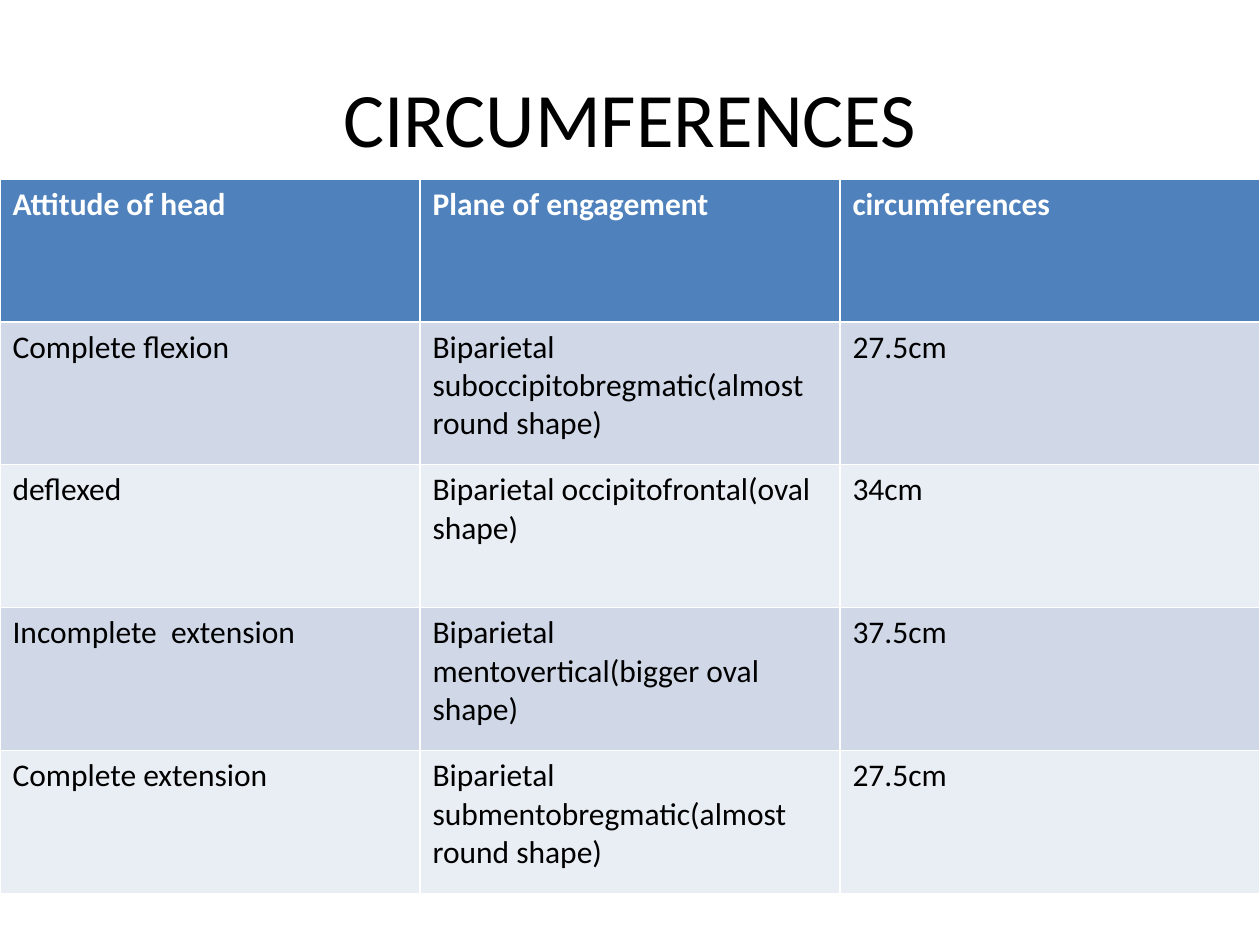
from pptx import Presentation
from pptx.dml.color import RGBColor
from pptx.enum import text
from pptx.util import Inches, Pt

COLORS = {
    "white": "FFFFFF",
    "black": "000000",
    "header": "4F81BD",
    "odd": "D0D8E8",
    "even": "E9EDF4",
}


def write(tf, content, size=18, color="black", bold=False, align=text.PP_ALIGN.LEFT):
    p = tf.paragraphs[0]
    p.alignment = align
    r = p.add_run()
    r.text = content
    r.font.name = "Calibri"
    r.font.size = Pt(size)
    r.font.bold = bold
    r.font.color.rgb = RGBColor.from_string(COLORS[color])


prs = Presentation()
prs.slide_width, prs.slide_height = Inches(10), Inches(7.5)
W, H = prs.slide_width, prs.slide_height
slide = prs.slides.add_slide(prs.slide_layouts[5])
slide.background.fill.solid()
slide.background.fill.fore_color.rgb = RGBColor.from_string(COLORS["white"])

title = slide.shapes.title
title.left, title.top = int(W * 0.05), int(H * 0.04)
title.width, title.height = int(W * 0.9), int(H / 6)
title.text_frame.vertical_anchor = text.MSO_ANCHOR.MIDDLE
write(title.text_frame, "CIRCUMFERENCES", size=44, align=text.PP_ALIGN.CENTER)

rows = [
    ("Attitude of head", "Plane of engagement", "circumferences"),
    ("Complete flexion", "Biparietal suboccipitobregmatic(almost round shape)", "27.5cm"),
    ("deflexed", "Biparietal occipitofrontal(oval shape)", "34cm"),
    ("Incomplete  extension", "Biparietal mentovertical(bigger oval shape)", "37.5cm"),
    ("Complete extension", "Biparietal  submentobregmatic(almost round shape)", "27.5cm"),
]
table = slide.shapes.add_table(
    len(rows), len(rows[0]), 0, Inches(1.42), W, Inches(5.67)
).table

for i, row in enumerate(rows):
    header = i == 0
    fill = "header" if header else "odd" if i % 2 else "even"
    for j, content in enumerate(row):
        cell = table.cell(i, j)
        cell.fill.solid()
        cell.fill.fore_color.rgb = RGBColor.from_string(COLORS[fill])
        write(cell.text_frame, content, color="white" if header else "black", bold=header)

prs.save("out.pptx")
